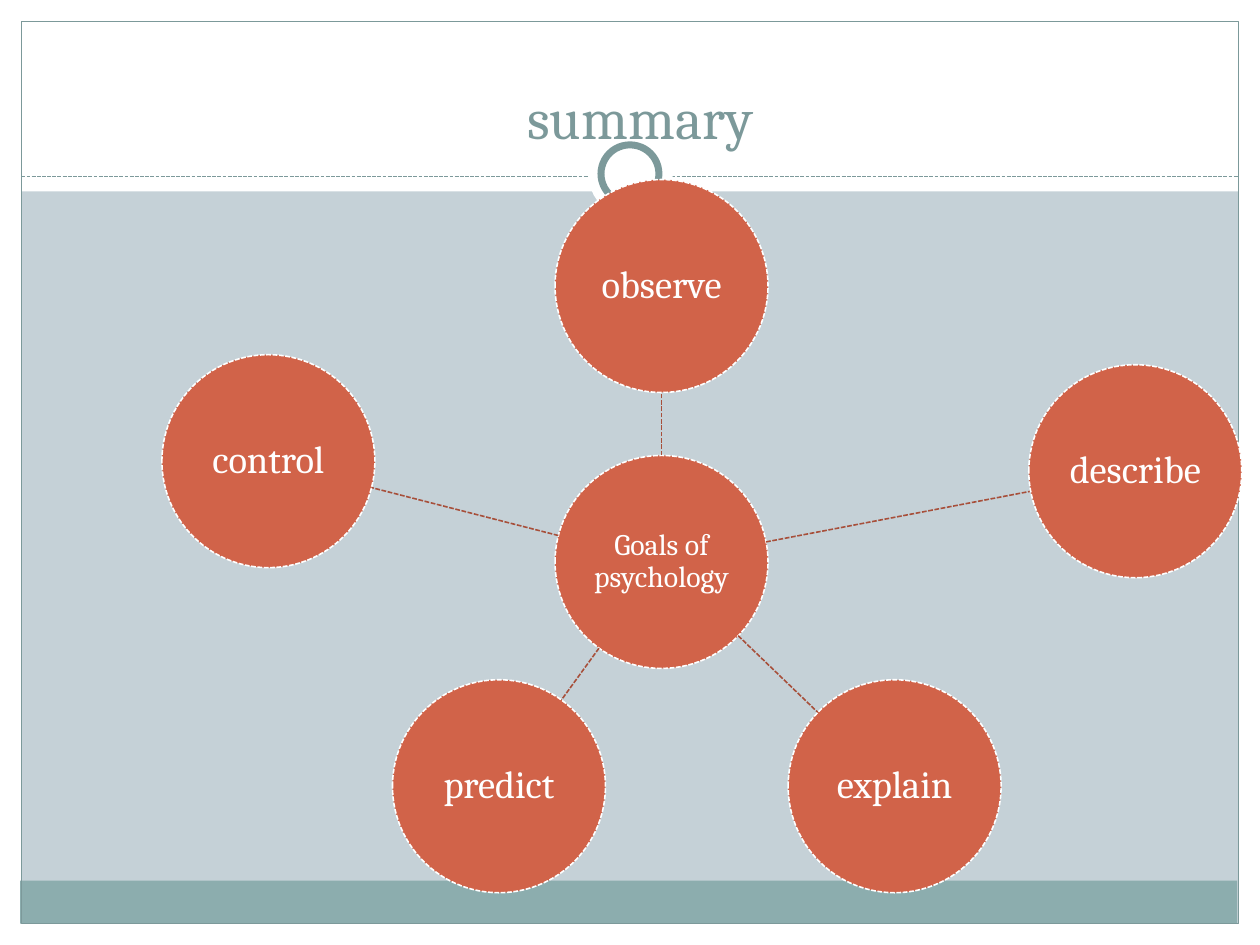
from dataclasses import dataclass
from math import hypot

from lxml import etree
from pptx import Presentation
from pptx.dml.color import RGBColor
from pptx.enum.dml import MSO_LINE
from pptx.enum.shapes import MSO_CONNECTOR, MSO_SHAPE
from pptx.enum.text import MSO_ANCHOR, PP_ALIGN
from pptx.oxml.ns import qn
from pptx.util import Inches, Pt


@dataclass(frozen=True)
class Theme:
    font: str = "Cambria"
    background: str = "C5D1D7"
    white: str = "FFFFFF"
    band: str = "8CADAE"
    accent: str = "7C999A"
    circle: str = "D16349"
    spoke: str = "A74F3A"
    title_size: float = 33
    hub_size: float = 17
    goal_size: float = 22
    frame_width: float = 0.75
    diagram_width: float = 0.9
    ring_width: float = 4


THEME = Theme()
DIAMETER = 1.69
HUB = (5.25, 4.46)
GOALS = {
    "observe": (5.25, 2.27),
    "describe": (9.01, 3.74),
    "explain": (7.1, 6.24),
    "predict": (3.96, 6.24),
    "control": (2.13, 3.66),
}


def color(value):
    return RGBColor.from_string(value)


def style_line(line, value, width, dashed=False):
    line.color.rgb = color(value)
    line.width = Pt(width)
    if dashed:
        line.dash_style = MSO_LINE.SQUARE_DOT


def add_shape(slide, kind, box, fill=None):
    shape = slide.shapes.add_shape(kind, *map(Inches, box))
    shape.shadow.inherit = False
    shape.line.fill.background()
    if fill:
        shape.fill.solid()
        shape.fill.fore_color.rgb = color(fill)
    else:
        shape.fill.background()
    return shape


def add_dashed_line(slide, start, end, value, width):
    connector = slide.shapes.add_connector(
        MSO_CONNECTOR.STRAIGHT, *map(Inches, (*start, *end)))
    style_line(connector.line, value, width, dashed=True)
    etree.SubElement(connector._element.spPr, qn("a:effectLst"))


def set_text(shape, text, size, value, anchor):
    frame = shape.text_frame
    frame.word_wrap = True
    frame.vertical_anchor = anchor
    paragraph = frame.paragraphs[0]
    paragraph.text = text
    paragraph.alignment = PP_ALIGN.CENTER
    paragraph.font.name = THEME.font
    paragraph.font.size = Pt(size)
    paragraph.font.color.rgb = color(value)
    return frame


def add_backdrop(slide):
    slide.background.fill.solid()
    slide.background.fill.fore_color.rgb = color(THEME.background)
    for box, fill in (
        ((0, 7.33, 10, 0.17), THEME.white),
        ((0, 0, 10, 1.52), THEME.white),
        ((0, 0, 0.17, 7.5), THEME.white),
        ((9.83, 0, 0.17, 7.5), THEME.white),
        ((0.16, 6.99, 9.66, 0.34), THEME.band),
    ):
        add_shape(slide, MSO_SHAPE.RECTANGLE, box, fill)
    frame = add_shape(slide, MSO_SHAPE.RECTANGLE, (0.17, 0.17, 9.66, 7.16))
    style_line(frame.line, THEME.accent, THEME.frame_width)
    add_dashed_line(slide, (0.17, 1.4), (9.83, 1.4), THEME.accent, THEME.frame_width)
    add_shape(slide, MSO_SHAPE.OVAL, (4.67, 1.05, 0.67, 0.67), THEME.white)
    ring = add_shape(slide, MSO_SHAPE.OVAL, (4.77, 1.15, 0.46, 0.46), THEME.white)
    style_line(ring.line, THEME.accent, THEME.ring_width)


def add_title(slide, text):
    box = slide.shapes.add_textbox(*map(Inches, (0.58, 0, 9, 1.25)))
    set_text(box, text, THEME.title_size, THEME.accent, MSO_ANCHOR.BOTTOM)


def add_circle(slide, center, text, size):
    x, y = center
    radius = DIAMETER / 2
    circle = add_shape(slide, MSO_SHAPE.OVAL,
                       (x - radius, y - radius, DIAMETER, DIAMETER), THEME.circle)
    style_line(circle.line, THEME.white, THEME.diagram_width, dashed=True)
    frame = set_text(circle, text, size, THEME.white, MSO_ANCHOR.MIDDLE)
    frame.margin_left = frame.margin_right = Inches(0.02)
    frame.margin_top = frame.margin_bottom = Inches(0.02)
    frame.paragraphs[0].line_spacing = 0.9


def add_spoke(slide, center):
    """Join the rim of the hub to the rim of the goal circle at center."""
    across, down = center[0] - HUB[0], center[1] - HUB[1]
    share = DIAMETER / 2 / hypot(across, down)
    start = (HUB[0] + across * share, HUB[1] + down * share)
    end = (center[0] - across * share, center[1] - down * share)
    add_dashed_line(slide, start, end, THEME.spoke, THEME.diagram_width)


def main():
    presentation = Presentation()
    presentation.slide_width = Inches(10)
    presentation.slide_height = Inches(7.5)
    slide = presentation.slides.add_slide(presentation.slide_layouts[6])
    add_backdrop(slide)
    add_title(slide, "summary")
    add_circle(slide, HUB, "Goals of psychology", THEME.hub_size)
    for goal, center in GOALS.items():
        add_spoke(slide, center)
        add_circle(slide, center, goal, THEME.goal_size)
    presentation.save("out.pptx")


if __name__ == "__main__":
    main()
